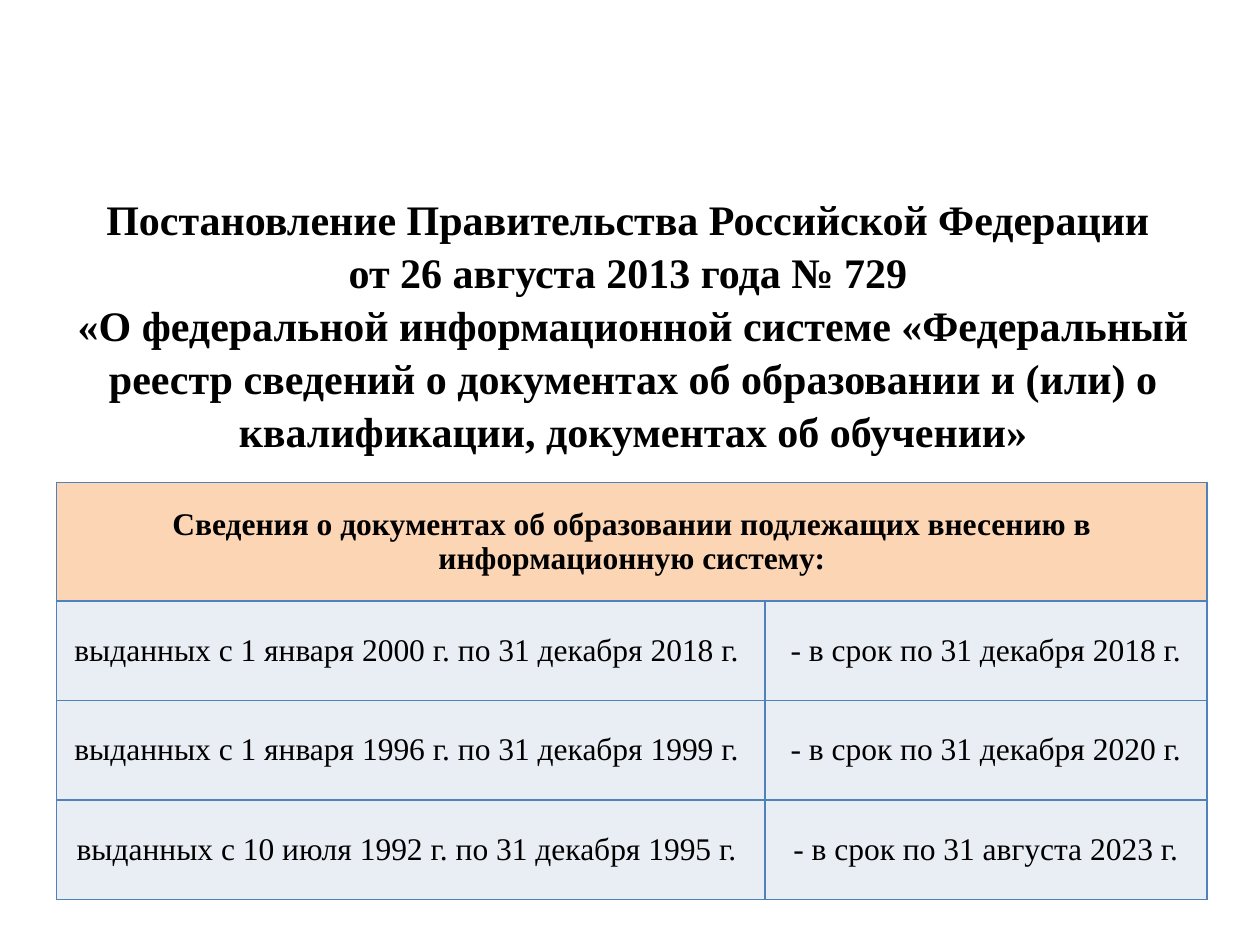
from lxml.etree import SubElement
from pptx import Presentation
from pptx.dml.color import RGBColor
from pptx.enum.text import MSO_ANCHOR, PP_ALIGN
from pptx.oxml.ns import qn
from pptx.util import Inches, Pt

# Content
TITLE = [
    ["Постановление Правительства Российской Федерации "],
    ["от 26 августа 2013 года № 729 ",
     "«О федеральной информационной системе «Федеральный реестр сведений "
     "о документах об образовании и (или) о квалификации, документах об обучении»"],
]
HEADER = "Сведения о документах об образовании подлежащих внесению в информационную систему:"
DEADLINES = [
    ("выданных с 1 января 2000 г. по 31 декабря 2018 г. ", "- в срок по 31 декабря 2018 г."),
    ("выданных с 1 января 1996 г. по 31 декабря 1999 г. ", "- в срок по 31 декабря 2020 г."),
    ("выданных с 10 июля 1992 г. по 31 декабря 1995 г. ", "- в срок по 31 августа 2023 г."),
]

FONT = "Times New Roman"
BLACK = RGBColor(0x00, 0x00, 0x00)
BLUE = RGBColor(0x4F, 0x81, 0xBD)
PEACH = RGBColor(0xFC, 0xD5, 0xB5)
PALE = RGBColor(0xE9, 0xED, 0xF4)

COLUMN_WIDTHS = (5.62, 3.51)
HEADER_HEIGHT, ROW_HEIGHT = 0.94, 0.79


def add_text(paragraph, lines, size, bold):
    paragraph.alignment = PP_ALIGN.CENTER
    for index, line in enumerate(lines):
        if index:
            paragraph.add_line_break()
        run = paragraph.add_run()
        run.text = line
        run.font.name = FONT
        run.font.size = Pt(size)
        run.font.bold = bold
        run.font.color.rgb = BLACK


def style_cell(cell, fill):
    properties = cell._tc.get_or_add_tcPr()
    for side in ("lnL", "lnR", "lnT", "lnB"):
        line = SubElement(properties, qn(f"a:{side}"), w=str(Pt(1)))
        solid = SubElement(line, qn("a:solidFill"))
        SubElement(solid, qn("a:srgbClr"), val=str(BLUE))
    cell.fill.solid()
    cell.fill.fore_color.rgb = fill
    cell.vertical_anchor = MSO_ANCHOR.MIDDLE
    cell.margin_left = cell.margin_right = cell.margin_top = cell.margin_bottom = 0


presentation = Presentation()
presentation.slide_width, presentation.slide_height = Inches(10), Inches(7.5)
slide = presentation.slides.add_slide(presentation.slide_layouts[6])

# Title
title = slide.shapes.add_textbox(Inches(0.24), Inches(1.47), Inches(9.57), Inches(2.12))
frame = title.text_frame
frame.word_wrap = True
for index, lines in enumerate(TITLE):
    paragraph = frame.add_paragraph() if index else frame.paragraphs[0]
    paragraph.line_spacing = 1.05
    add_text(paragraph, lines, 24, True)

# Table of deadlines
heights = [HEADER_HEIGHT] + [ROW_HEIGHT] * len(DEADLINES)
table = slide.shapes.add_table(
    len(heights), len(COLUMN_WIDTHS), Inches(0.45), Inches(3.83),
    Inches(sum(COLUMN_WIDTHS)), Inches(sum(heights))).table
for column, width in zip(table.columns, COLUMN_WIDTHS):
    column.width = Inches(width)
for row, height in zip(table.rows, heights):
    row.height = Inches(height)

table.cell(0, 0).merge(table.cell(0, 1))
for row_index, texts in enumerate([(HEADER, "")] + DEADLINES):
    is_header = row_index == 0
    for column_index, text in enumerate(texts):
        cell = table.cell(row_index, column_index)
        style_cell(cell, PEACH if is_header else PALE)
        if text:
            add_text(cell.text_frame.paragraphs[0], [text], 18, is_header)

presentation.save("out.pptx")
